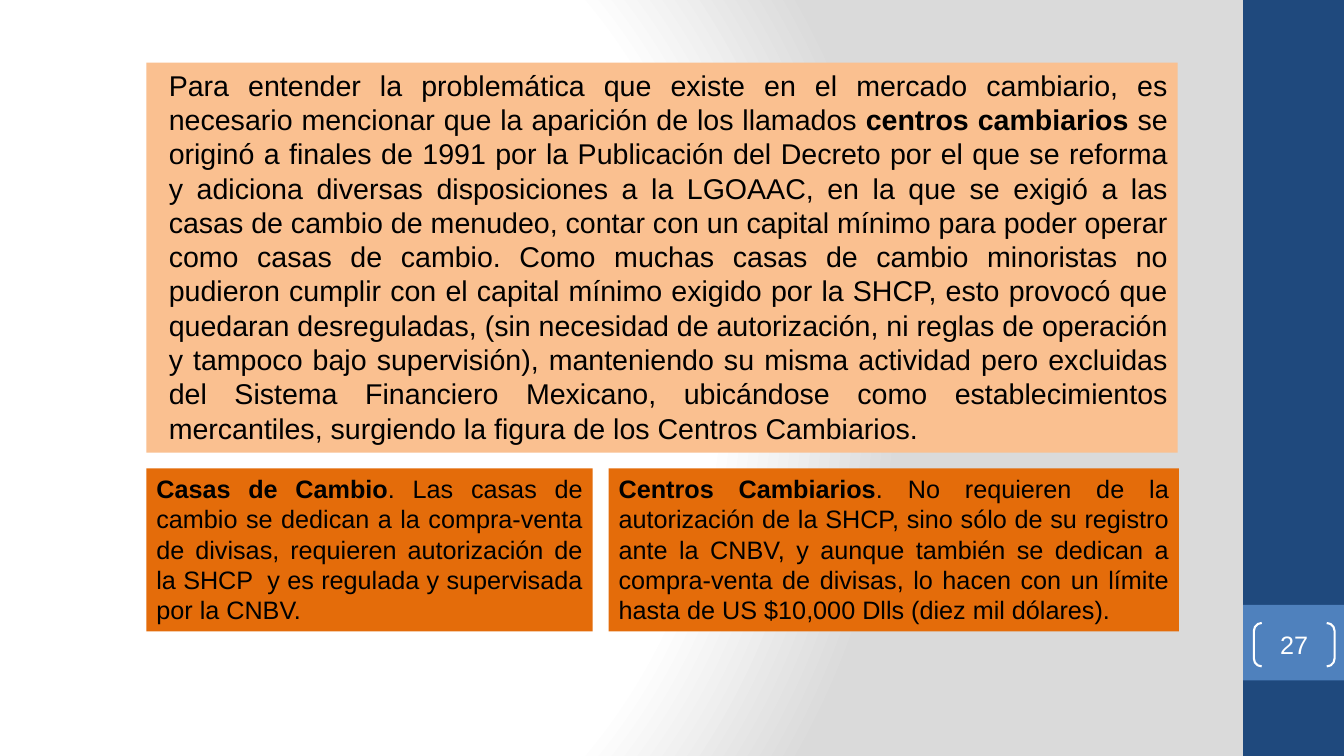
from dataclasses import dataclass

import lxml.etree
import pptx
import pptx.dml.color
import pptx.enum.shapes
import pptx.enum.text
import pptx.oxml
import pptx.oxml.ns
import pptx.util

Pt = pptx.util.Pt
Shape = pptx.enum.shapes.MSO_SHAPE
Align = pptx.enum.text.PP_ALIGN
Anchor = pptx.enum.text.MSO_ANCHOR

SLIDE_WIDTH, SLIDE_HEIGHT = 960, 540
BAND_LEFT, BAND_WIDTH = 888, 72
BACKDROP_STOPS = ((0, "FFFFFF"), (75, "FFFFFF"), (100, "DADADA"))


@dataclass(frozen=True)
class Box:
    left: float
    top: float
    width: float
    height: float


@dataclass(frozen=True)
class Panel:
    box: Box
    fill: str
    size: float
    runs: tuple[tuple[str, bool], ...]
    left_inset: float = 7.2
    space_before: float = 0


BANDS = (
    (Box(BAND_LEFT, 0, BAND_WIDTH, SLIDE_HEIGHT), "1F497D"),
    (Box(BAND_LEFT, 432, BAND_WIDTH, 54), "4F81BD"),
)

PANELS = (
    Panel(
        Box(104.6, 44.8, 736.6, 278.6), "FAC090", 20.4,
        (
            ("Para entender la problemática que existe en el mercado cambiario, es necesario "
             "mencionar que la aparición de los llamados ", False),
            ("centros cambiarios", True),
            (" se originó a finales de 1991 por la Publicación del Decreto por el que se reforma "
             "y adiciona diversas disposiciones a la LGOAAC, en la que se exigió a las casas de "
             "cambio de menudeo, contar con un capital mínimo para poder operar como casas de "
             "cambio. Como muchas casas de cambio minoristas no pudieron cumplir con el capital "
             "mínimo exigido por la SHCP, esto provocó que quedaran desreguladas, (sin necesidad "
             "de autorización, ni reglas de operación y tampoco bajo supervisión), manteniendo su "
             "misma actividad pero excluidas del Sistema Financiero Mexicano, ubicándose como "
             "establecimientos mercantiles, surgiendo la figura de los Centros Cambiarios.", False),
        ),
        left_inset=16, space_before=4,
    ),
    Panel(
        Box(104.6, 334.6, 318.7, 116.4), "E46C0A", 18,
        (
            ("Casas de Cambio", True),
            (". Las casas de cambio se dedican a la compra-venta de divisas, requieren "
             "autorización de la SHCP  y es regulada y supervisada por la CNBV. ", False),
        ),
    ),
    Panel(
        Box(434.8, 334.6, 407.2, 116.4), "E46C0A", 18,
        (
            ("Centros Cambiarios", True),
            (". No requieren de la autorización de la SHCP, sino sólo de su registro ante la "
             "CNBV, y aunque también se dedican a compra-venta de divisas, lo hacen con un límite "
             "hasta de US $10,000 Dlls (diez mil dólares).  ", False),
        ),
    ),
)


def color(value: str) -> pptx.dml.color.RGBColor:
    return pptx.dml.color.RGBColor.from_string(value)


def apply(target, formats: dict) -> None:
    for name, value in formats.items():
        setattr(target, name, value)


def paint_backdrop(slide) -> None:
    slide.background.fill.gradient()
    gradient = next(slide.element.iter(pptx.oxml.ns.qn("a:gradFill")))
    for part in list(gradient):
        gradient.remove(part)
    stops = "".join(
        f'<a:gs pos="{position * 1000}"><a:srgbClr val="{value}"/></a:gs>'
        for position, value in BACKDROP_STOPS
    )
    radial = pptx.oxml.parse_xml(
        f'<a:gradFill {pptx.oxml.ns.nsdecls("a")}><a:gsLst>{stops}</a:gsLst>'
        '<a:path path="circle"><a:fillToRect l="20000" t="50000" r="100000" b="50000"/>'
        '</a:path></a:gradFill>'
    )
    for part in list(radial):
        gradient.append(part)


def add_block(slide, kind, box: Box, fill: str | None = None):
    block = slide.shapes.add_shape(
        kind, Pt(box.left), Pt(box.top), Pt(box.width), Pt(box.height)
    )
    block.shadow.inherit = False
    block.line.fill.background()
    if fill:
        block.fill.solid()
        block.fill.fore_color.rgb = color(fill)
    else:
        block.fill.background()
    return block


def write_run(paragraph, text: str, size: float, ink: str, bold: bool = False) -> None:
    run = paragraph.add_run()
    run.text = text
    apply(run.font, {"name": "Arial", "size": Pt(size), "bold": bold})
    run.font.color.rgb = color(ink)


def add_panel(slide, panel: Panel) -> None:
    frame = add_block(slide, Shape.RECTANGLE, panel.box, panel.fill).text_frame
    apply(frame, {
        "word_wrap": True,
        "vertical_anchor": Anchor.TOP,
        "margin_left": Pt(panel.left_inset),
        "margin_right": Pt(7.2),
        "margin_top": Pt(3.6),
        "margin_bottom": Pt(3.6),
    })
    paragraph = frame.paragraphs[0]
    apply(paragraph, {"alignment": Align.JUSTIFY, "space_before": Pt(panel.space_before)})
    for text, bold in panel.runs:
        write_run(paragraph, text, panel.size, "000000", bold)


def add_page_number(slide, number: str) -> None:
    bracket = add_block(slide, Shape.DOUBLE_BRACKET, Box(895.7, 445, 57.6, 31))
    bracket.adjustments[0] = 0.18
    bracket.line.color.rgb = color("FFFFFF")
    bracket.line.width = Pt(1.5)
    frame = bracket.text_frame
    apply(frame, {
        "vertical_anchor": Anchor.MIDDLE,
        "margin_left": 0,
        "margin_right": 0,
        "margin_top": 0,
        "margin_bottom": 0,
    })
    frame.paragraphs[0].alignment = Align.CENTER
    write_run(frame.paragraphs[0], number, 18, "FFFFFF")


def main() -> None:
    deck = pptx.Presentation()
    apply(deck, {"slide_width": Pt(SLIDE_WIDTH), "slide_height": Pt(SLIDE_HEIGHT)})
    slide = deck.slides.add_slide(deck.slide_layouts[6])
    paint_backdrop(slide)
    for box, fill in BANDS:
        add_block(slide, Shape.RECTANGLE, box, fill)
    for panel in PANELS:
        add_panel(slide, panel)
    add_page_number(slide, "27")
    deck.save("out.pptx")


if __name__ == "__main__":
    main()
